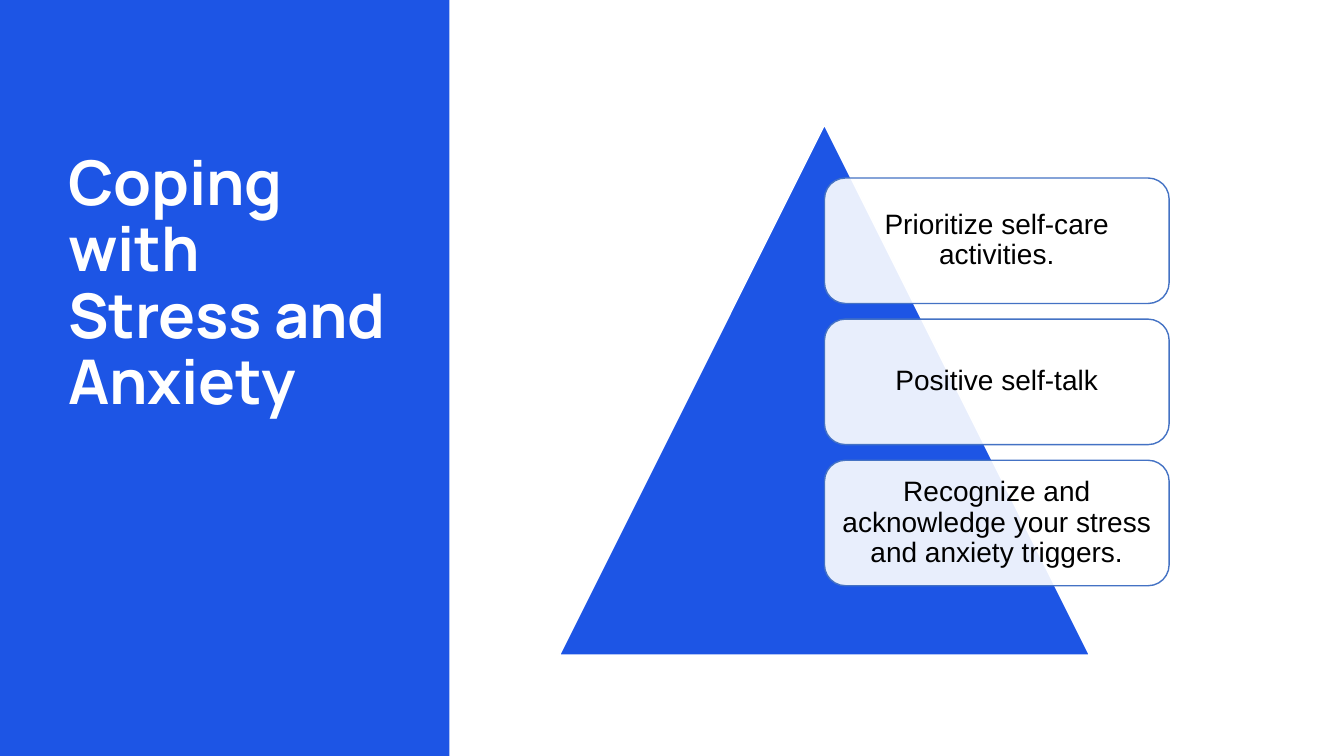
from lxml.etree import SubElement
from pptx import Presentation
from pptx.dml.color import RGBColor
from pptx.enum.shapes import MSO_SHAPE as SHAPE
from pptx.enum.text import MSO_ANCHOR as ANCHOR, MSO_AUTO_SIZE as AUTOSIZE, PP_ALIGN as ALIGN
from pptx.oxml.ns import qn
from pptx.util import Pt

# Content
TITLE = "Coping with Stress and Anxiety"
STRATEGIES = [
    "Prioritize self-care activities.",
    "Positive self-talk",
    "Recognize and acknowledge your stress and anxiety triggers.",
]
COLORS = {"blue": "1D55E5", "outline": "4472C4", "white": "FFFFFF", "black": "000000"}

# Layout in points
SLIDE_W, SLIDE_H = 960, 540
PANEL_W = 321.1
PYRAMID_LEFT, PYRAMID_TOP, PYRAMID_SIZE = 399.6, 89.3, 378.7
CARD_LEFT = PYRAMID_LEFT + PYRAMID_SIZE / 2
CARD_TOP = PYRAMID_TOP + PYRAMID_SIZE / 10
CARD_W, CARD_H = PYRAMID_SIZE * 0.65, 89.6
CARD_STEP = CARD_H * 9 / 8


def rgb(name):
    return RGBColor.from_string(COLORS[name])


def write(shape, text, *, font, size, color, bold=False, align=ALIGN.LEFT,
          anchor=ANCHOR.TOP, inset=(7.2, 3.6), spacing=0):
    frame = shape.text_frame
    frame.word_wrap = True
    frame.auto_size = AUTOSIZE.NONE
    frame.vertical_anchor = anchor
    frame.margin_left = frame.margin_right = Pt(inset[0])
    frame.margin_top = frame.margin_bottom = Pt(inset[1])
    paragraph = frame.paragraphs[0]
    paragraph.alignment = align
    paragraph.line_spacing = 0.9
    run = paragraph.add_run()
    run.text = text
    run.font.name, run.font.size, run.font.bold = font, Pt(size), bold
    run.font.color.rgb = rgb(color)
    if spacing:
        run.font._element.set("spc", str(int(spacing * 100)))


def add_block(slide, kind, left, top, width, height, fill, line=None, opacity=100):
    block = slide.shapes.add_shape(kind, Pt(left), Pt(top), Pt(width), Pt(height))
    block.shadow.inherit = False
    block.fill.solid()
    block.fill.fore_color.rgb = rgb(fill)
    if opacity < 100:
        tint = block._element.spPr.find(qn("a:solidFill"))[0]
        SubElement(tint, qn("a:alpha")).set("val", str(opacity * 1000))
    if line:
        block.line.color.rgb = rgb(line)
        block.line.width = Pt(1)
    else:
        block.line.fill.background()
    return block


def main():
    deck = Presentation()
    deck.slide_width, deck.slide_height = Pt(SLIDE_W), Pt(SLIDE_H)
    slide = deck.slides.add_slide(deck.slide_layouts[5])

    # Blue side panel, placed behind the title
    panel = add_block(slide, SHAPE.RECTANGLE, 0, 0, PANEL_W, SLIDE_H, "blue")
    title = slide.shapes.title
    title._element.addprevious(panel._element)

    # Title
    title.left, title.top, title.width, title.height = Pt(41.8), Pt(105.1), Pt(252.7), Pt(362.9)
    write(title, TITLE, font="Manrope", size=44, color="white", bold=True, spacing=-0.2)

    # Pyramid
    add_block(slide, SHAPE.ISOSCELES_TRIANGLE, PYRAMID_LEFT, PYRAMID_TOP,
              PYRAMID_SIZE, PYRAMID_SIZE, "blue", line="white")

    # Strategy cards
    for index, strategy in enumerate(STRATEGIES):
        card = add_block(slide, SHAPE.ROUNDED_RECTANGLE, CARD_LEFT, CARD_TOP + index * CARD_STEP,
                         CARD_W, CARD_H, "white", line="outline", opacity=90)
        write(card, strategy, font="Arial", size=20, color="black", align=ALIGN.CENTER,
              anchor=ANCHOR.MIDDLE, inset=(6, 6))

    deck.save("out.pptx")


if __name__ == "__main__":
    main()
